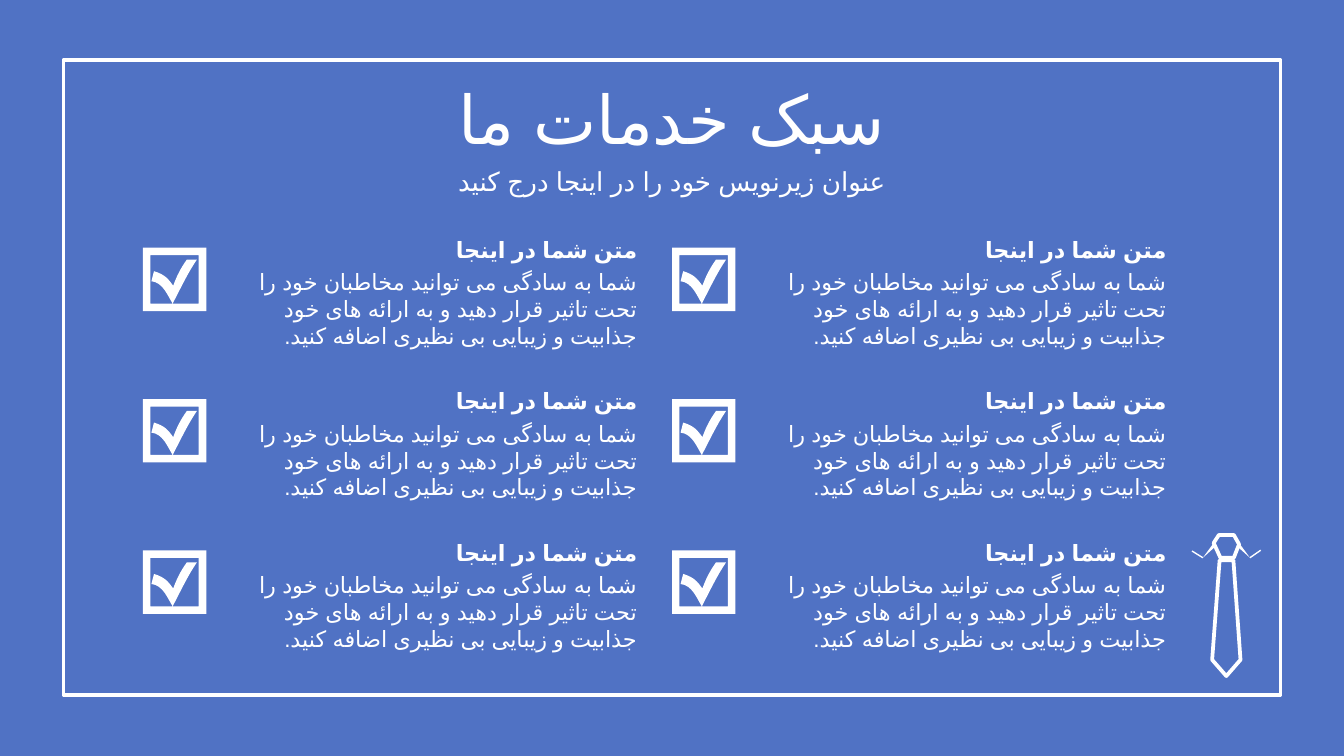
"""Build a slide that lists six services, each with a ticked checkbox."""
from lxml import etree
from pptx import Presentation, util as u
from pptx.dml.color import RGBColor
from pptx.enum import shapes, text
from pptx.oxml.ns import qn

TITLE = "سبک خدمات ما"
SUBTITLE = "عنوان زیرنویس خود را در اینجا درج کنید"
HEADING = "متن شما در اینجا"
BODY = ("شما به سادگی می توانید مخاطبان خود را تحت تاثیر قرار دهید و به "
        "ارائه های خود جذابیت و زیبایی بی نظیری اضافه کنید.")
SERVICES = [[(HEADING, BODY)] * 3, [(HEADING, BODY)] * 3]

THEME = {"back": RGBColor(0x50, 0x72, 0xC4), "ink": RGBColor(255, 255, 255),
         "font": "Arial", "language": "fa-IR", "title": 36, "subtitle": 14,
         "body": 12, "thick": 2, "thin": 0.75}

FRAME = (34, 32.2, 652, 340)
TITLE_BOX = (34, 40.3, 652, 45.4)
SUBTITLE_BOX = (34, 85.7, 652, 22.3)
GRID = {"left": 76.5, "top": 132.7, "across": 283.5, "down": 81.1}
HEADING_BOX = (45.3, -9.7, 226.8, 21.6)
BODY_BOX = (45.3, 7.6, 226.8, 51)

CHECK_FRAME = [(0, 0), (34, 0), (34, 34), (0, 34)]
CHECK_START = [(4, 4), (4, 30), (16, 30)]
CHECK_CURVES = [
    [(16, 30), (13.5, 26), (10.8, 18.5), (4.6, 18), (6, 12.6)],
    [(6, 12.6), (12, 14.5), (13.5, 16.6), (16.3, 20.4)],
    [(16.3, 20.4), (18.5, 14.6), (20, 11.5), (23.6, 6.4), (29, 6.4)],
    [(29, 6.4), (24.4, 13), (20, 22.3), (16, 30)],
]
CHECK_END = [(30, 30), (30, 4)]

TIE_KNOT = [(650.2, 290.9), (653, 286.6), (661, 286.6),
            (663.8, 291.6), (661, 298.8), (653.8, 298.8)]
TIE_BLADE = [(664.6, 353.5), (657, 362.2), (649.4, 353.5),
             (653.4, 300.2), (660.8, 300.2)]
COLLAR_FOLDS = [[(644.4, 298.8), (650.2, 290.9), (650.9, 293)],
                [(669.6, 298.8), (663.8, 290.9), (663.1, 293)]]
COLLAR_LINES = [(638.6, 295.2, 644.4, 298.8), (675.4, 294.8, 669.6, 298.8)]


def points(values):
    return [u.Pt(value) for value in values]


def bezier(start, first, second, end, steps=8):
    result = []
    for step in range(1, steps + 1):
        t = step / steps
        weights = ((1 - t) ** 3, 3 * t * (1 - t) ** 2, 3 * t * t * (1 - t), t ** 3)
        corners = (start, first, second, end)
        result.append(tuple(sum(w * c[axis] for w, c in zip(weights, corners))
                            for axis in (0, 1)))
    return result


def check_outline():
    inner = list(CHECK_START)
    for curve in CHECK_CURVES:
        inner += bezier(*curve[:4]) + curve[4:]
    return inner + CHECK_END


def paint(shape, filled=False):
    shape.shadow.inherit = False
    if filled:
        shape.fill.solid()
        shape.fill.fore_color.rgb = THEME["ink"]
        shape.line.fill.background()
    else:
        shape.fill.background()
        shape.line.color.rgb = THEME["ink"]
        shape.line.width = u.Pt(THEME["thick"])


def add_outline(parent, contours, left=0, top=0, filled=False):
    moved = [[points((left + x, top + y)) for x, y in contour] for contour in contours]
    builder = parent.build_freeform(*moved[0][0], scale=1.0)
    builder.add_line_segments(moved[0][1:], close=True)
    for contour in moved[1:]:
        builder.move_to(*contour[0])
        builder.add_line_segments(contour[1:], close=True)
    paint(builder.convert_to_shape(), filled)


def write(box, words, size="body", bold=False, align="RIGHT", anchor="TOP"):
    frame = box.text_frame
    frame.word_wrap = True
    frame.auto_size = text.MSO_AUTO_SIZE.NONE
    frame.vertical_anchor = getattr(text.MSO_ANCHOR, anchor)
    para = frame.paragraphs[0]
    para.alignment = getattr(text.PP_ALIGN, align)
    para._p.get_or_add_pPr().set("rtl", "1")
    span = para.add_run()
    span.text = words
    span.font.size = u.Pt(THEME[size])
    span.font.bold = bold
    span.font.name = THEME["font"]
    span.font.color.rgb = THEME["ink"]
    style = span._r.get_or_add_rPr()
    style.set("lang", THEME["language"])
    etree.SubElement(style, qn("a:cs"), typeface=THEME["font"])


def add_tie(page):
    tie = page.shapes.add_group_shape().shapes
    add_outline(tie, [TIE_KNOT])
    add_outline(tie, [TIE_BLADE])
    for fold, ends in zip(COLLAR_FOLDS, COLLAR_LINES):
        add_outline(tie, [fold], filled=True)
        line = tie.add_connector(shapes.MSO_CONNECTOR.STRAIGHT, *points(ends))
        line.line.color.rgb = THEME["ink"]
        line.line.width = u.Pt(THEME["thin"])
        etree.SubElement(line._element.spPr, qn("a:effectLst"))


def add_service(page, left, top, heading, body):
    add_outline(page.shapes, [CHECK_FRAME, check_outline()], left, top, filled=True)
    group = page.shapes.add_group_shape().shapes
    for (x, y, width, height), words, bold in (
            (BODY_BOX, body, False), (HEADING_BOX, heading, True)):
        box = group.add_textbox(*points((left + x, top + y, width, height)))
        write(box, words, bold=bold)


def main():
    deck = Presentation()
    deck.slide_width, deck.slide_height = points((720, 405))
    page = deck.slides.add_slide(deck.slide_layouts[5])
    page.background.fill.solid()
    page.background.fill.fore_color.rgb = THEME["back"]

    paint(page.shapes.add_shape(shapes.MSO_SHAPE.RECTANGLE, *points(FRAME)))
    add_tie(page)

    title = page.shapes.title
    title.left, title.top, title.width, title.height = points(TITLE_BOX)
    write(title, TITLE, size="title", align="CENTER", anchor="MIDDLE")
    subtitle = page.shapes.add_textbox(*points(SUBTITLE_BOX))
    write(subtitle, SUBTITLE, size="subtitle", align="CENTER", anchor="MIDDLE")

    for column, services in enumerate(SERVICES):
        for row, (heading, body) in enumerate(services):
            add_service(page, GRID["left"] + column * GRID["across"],
                        GRID["top"] + row * GRID["down"], heading, body)
    deck.save("out.pptx")


if __name__ == "__main__":
    main()
